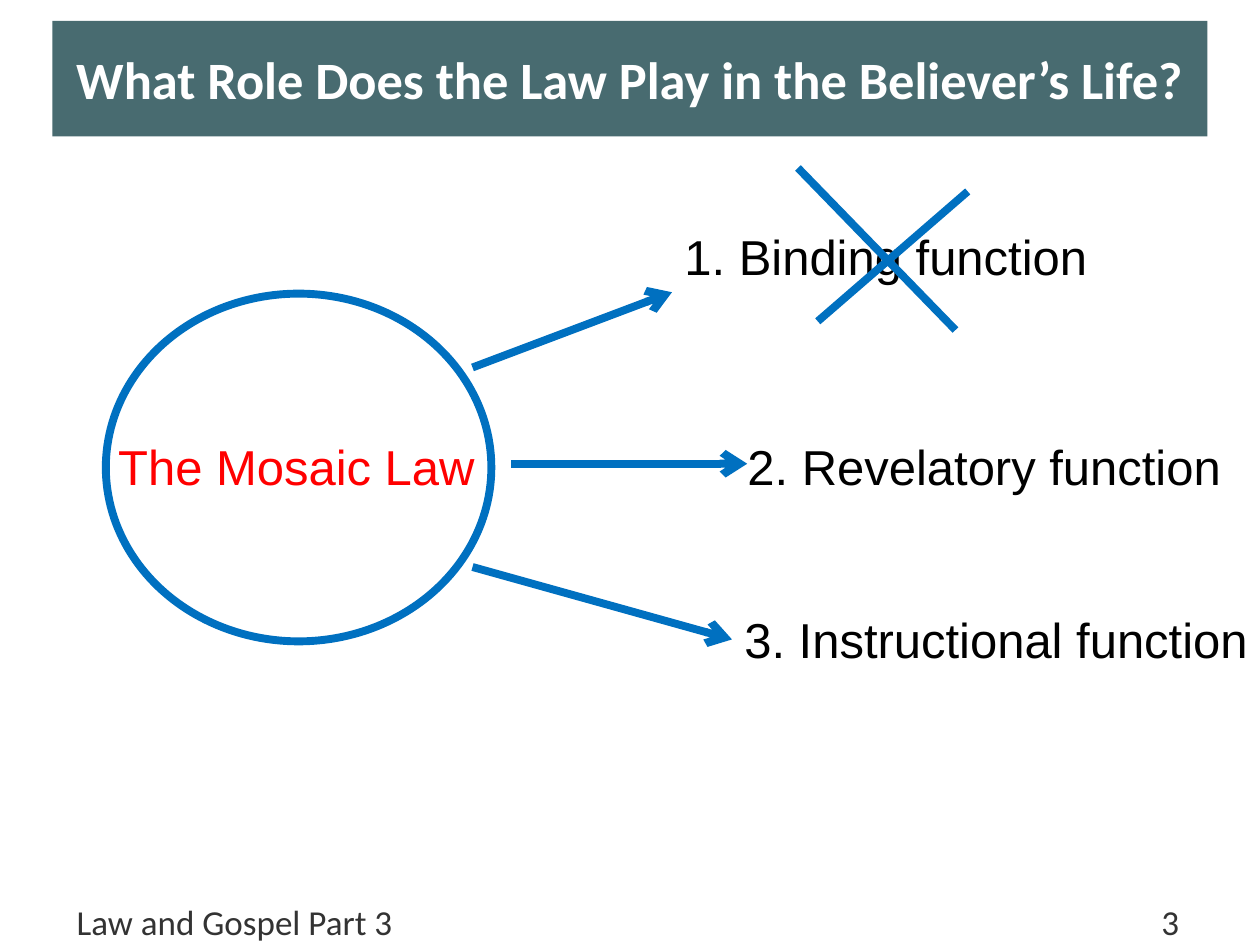
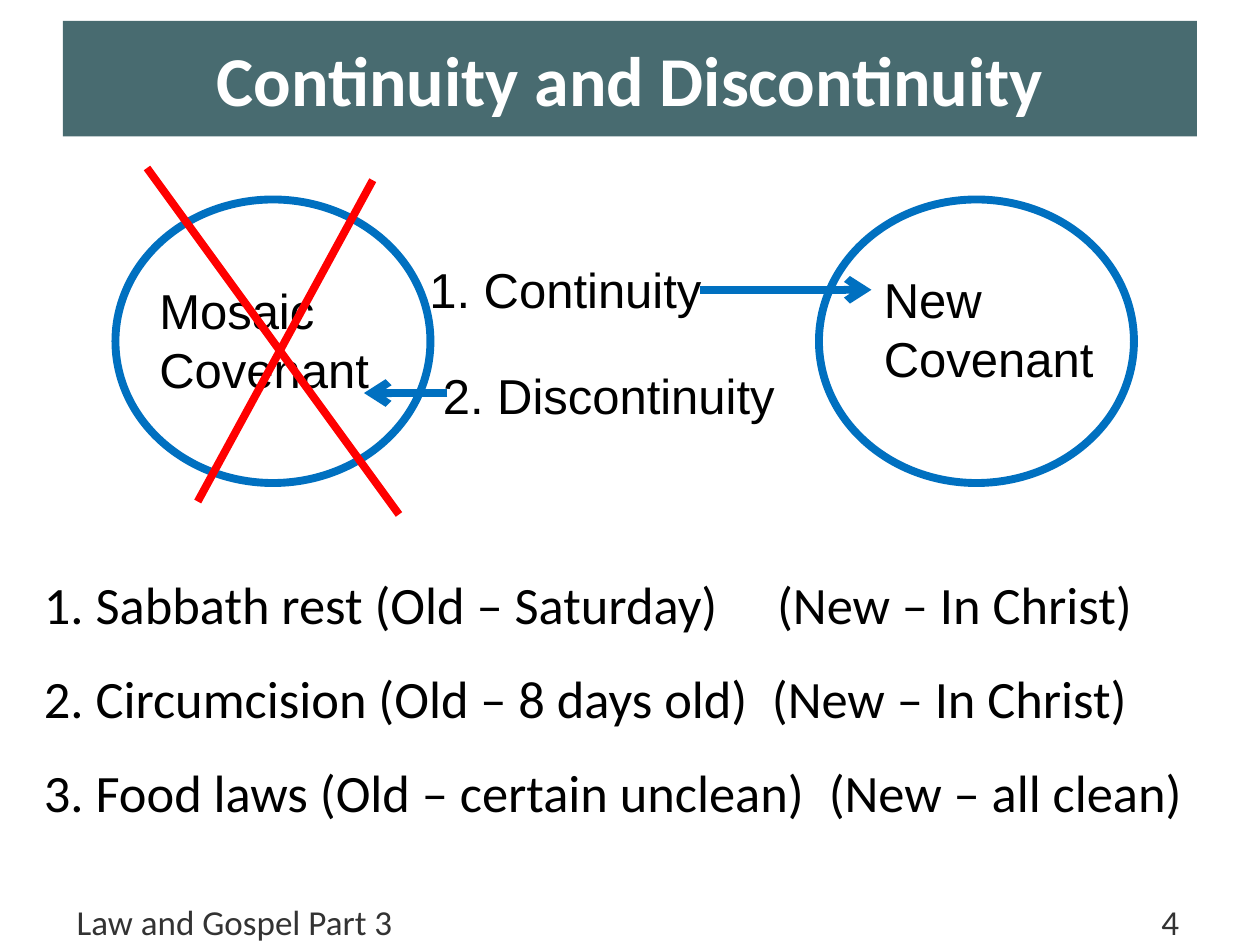
"""Build two slides on the role of the Law and on covenant continuity."""
from lxml.etree import SubElement
from pptx import Presentation
from pptx.dml.color import RGBColor
from pptx.enum.shapes import MSO_CONNECTOR, MSO_SHAPE
from pptx.enum.text import MSO_ANCHOR, PP_ALIGN
from pptx.oxml.ns import qn
from pptx.util import Pt

TEAL, BLUE, RED = "486B70", "0070C0", "FF0000"
BLACK, WHITE, GREY = "000000", "FFFFFF", "333333"
LINE_WIDTH = 4.5
color = RGBColor.from_string


def add_text(slide, text, left, top, width, height, size=28, font="Arial", fill=BLACK, tab=None, alignment="l"):
    text_box = slide.shapes.add_textbox(Pt(left), Pt(top), Pt(width), Pt(height))
    frame = text_box.text_frame
    frame.word_wrap = True
    frame.text = text
    paragraph = frame.paragraphs[0]
    for run in paragraph.runs:
        run.font.size, run.font.name = Pt(size), font
        run.font.color.rgb = color(fill)
    if tab:
        tab_list = SubElement(paragraph._p.get_or_add_pPr(), qn("a:tabLst"))
        SubElement(tab_list, qn("a:tab"), pos=str(Pt(tab)), algn=alignment)
    return text_box


def add_line(slide, start_x, start_y, end_x, end_y, stroke=BLUE, arrow=False):
    line = slide.shapes.add_connector(MSO_CONNECTOR.STRAIGHT, Pt(start_x), Pt(start_y), Pt(end_x), Pt(end_y))
    line.line.color.rgb = color(stroke)
    line.line.width = Pt(LINE_WIDTH)
    if arrow:
        SubElement(line.line._get_or_add_ln(), qn("a:tailEnd"), type="arrow")
    SubElement(line._element.spPr, qn("a:effectLst"))
    return line


presentation = Presentation()
presentation.slide_width, presentation.slide_height = Pt(720), Pt(540)

pages = [
    (3, "What Role Does the Law Play in the Believer’s Life?", 30, 660,
     [(60.5, 167.8, 220.3, 198.7)]),
    (4, "Continuity and Discontinuity", 40, 648,
     [(66, 114, 180, 162), (468, 114, 180, 162)]),
]
slides = []
for number, title, title_size, band_width, ovals in pages:
    slide = presentation.slides.add_slide(presentation.slide_layouts[6])
    slides.append(slide)

    footer = add_text(slide, f"Law and Gospel Part 3\t{number}", 36.7, 513.4, 648, 26.6,
                      20, "Calibri", GREY, 630, "r")
    footer.text_frame.vertical_anchor = MSO_ANCHOR.MIDDLE

    band = slide.shapes.add_shape(MSO_SHAPE.RECTANGLE, Pt((720 - band_width) / 2), Pt(12), Pt(band_width), Pt(66))
    band.shadow.inherit = False
    band.fill.solid()
    band.fill.fore_color.rgb = color(TEAL)
    band.line.fill.background()
    band.text_frame.text = title
    band.text_frame.word_wrap = True
    band.text_frame.vertical_anchor = MSO_ANCHOR.MIDDLE
    paragraph = band.text_frame.paragraphs[0]
    paragraph.alignment = PP_ALIGN.CENTER
    title_font = paragraph.runs[0].font
    title_font.name, title_font.size, title_font.bold = "Calibri", Pt(title_size), True
    title_font.color.rgb = color(WHITE)

    for left, top, width, height in ovals:
        oval = slide.shapes.add_shape(MSO_SHAPE.OVAL, Pt(left), Pt(top), Pt(width), Pt(height))
        oval.shadow.inherit = False
        oval.fill.background()
        oval.line.color.rgb = color(BLUE)
        oval.line.width = Pt(LINE_WIDTH)

role_slide, covenant_slide = slides

add_text(role_slide, "The Mosaic Law", 60.5, 246.2, 220.3, 41, fill=RED)
add_text(role_slide, "1. Binding function", 384, 126, 300, 41)
add_text(role_slide, "2. Revelatory function", 420, 246.2, 300, 41)
instructional = add_text(role_slide, "3. Instructional function", 418.3, 344.9, 342.7, 41)
add_line(role_slide, 270, 210, 384, 167, arrow=True)
add_line(role_slide, 292.3, 265, 427, 265, arrow=True)
instructional_arrow = add_line(role_slide, 270, 324, 418.3, 365.4, arrow=True)
instructional_arrow.end_connect(instructional, 1)
add_line(role_slide, 456, 96, 546, 188.6)
add_line(role_slide, 467.3, 183.6, 553, 109.4)

add_text(covenant_slide, "Mosaic Covenant", 84, 157, 144, 75)
add_text(covenant_slide, "New Covenant", 498, 150.5, 168, 75)
add_text(covenant_slide, "1. Continuity", 238.3, 144.7, 186, 41)
add_text(covenant_slide, "2. Discontinuity", 246, 205.2, 213, 41)
add_line(covenant_slide, 400.3, 165.6, 498, 165.6, arrow=True)
add_line(covenant_slide, 255.6, 224.6, 208, 224.6, arrow=True)
add_line(covenant_slide, 84, 96, 228, 294, RED)
add_line(covenant_slide, 213, 103, 113, 286.6, RED)

examples = [
    ("1. Sabbath rest (Old – Saturday)\t(New – In Christ)", 419),
    ("2. Circumcision (Old – 8 days old)\t(New – In Christ)", 416),
    ("3. Food laws (Old – certain unclean)\t(New – all clean)", 448.5),
]
for row, (example, tab) in enumerate(examples):
    add_text(covenant_slide, example, 18, 323.3 + row * 53.7, 702, 44, 30, "Calibri", tab=tab)

presentation.save("out.pptx")
